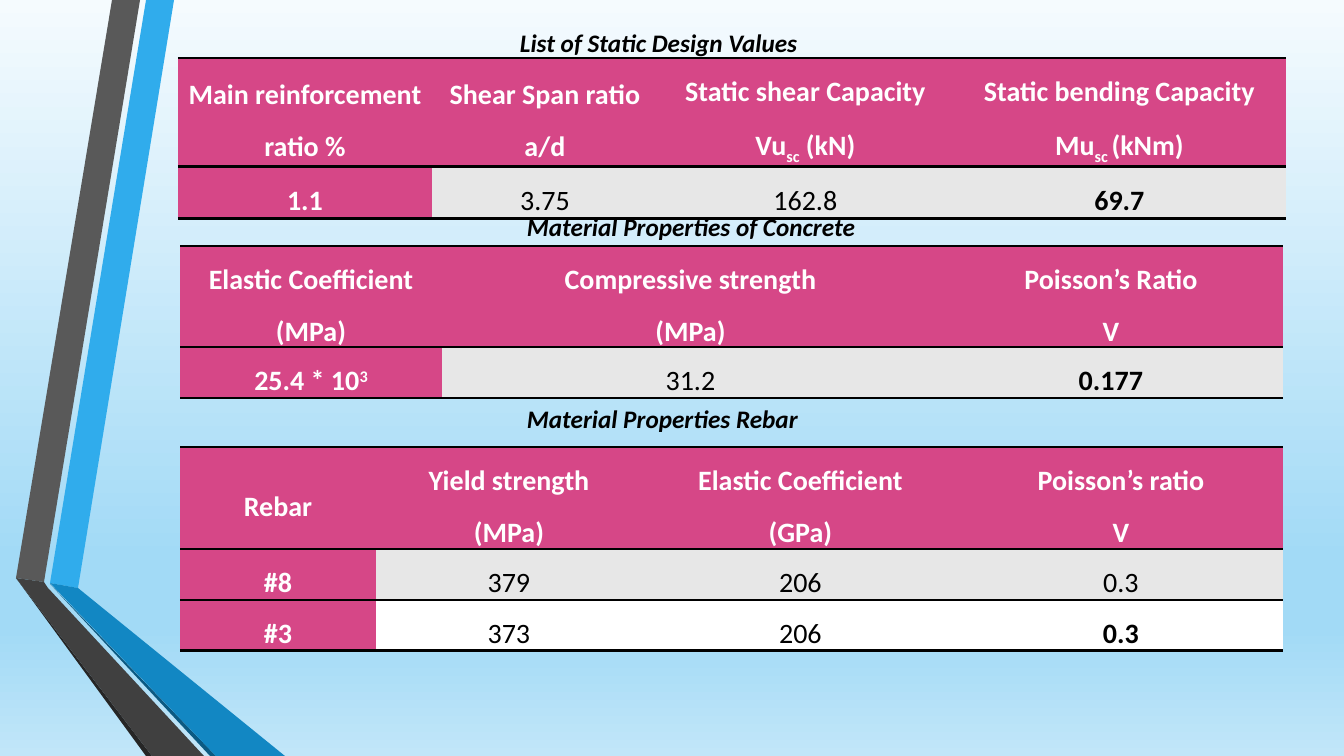
import pptx
import pptx.util
import pptx.dml.color
import pptx.enum.text
import pptx.oxml
import pptx.oxml.ns

PX = 914400 / 100.8
FONT = "Calibri"
COLORS = {
    "black": "000000", "white": "FFFFFF", "pink": "D64787", "band": "E7E7E7",
    "sky": "30ACEC", "blue": "1287C3", "navy": "0C5A82",
    "gray": "595959", "charcoal": "404040", "shade": "262626",
}
BACKGROUND_STOPS = [(0, "F5FBFE"), (74, "A2DAF6"), (83, "A2DAF6"), (100, "C1E6F9")]
NO_GRID_STYLE = "{2D5ABB26-0587-4C30-8999-92F81FD0307C}"
BASELINES = {"_": "-25000", "^": "30000"}

RIBBONS = [
    ("sky", [(50, 583), (78, 588), (174, 0), (146, 0)]),
    ("gray", [(140, 0), (112, 0), (16, 578), (44, 582)]),
    ("shade", [(16, 578), (146, 756), (152, 756)]),
    ("navy", [(50, 584), (210, 756), (216, 756)]),
    ("blue", [(50, 583), (216, 756), (285, 756), (78, 588)]),
    ("charcoal", [(204, 756), (48, 588), (44, 582), (16, 578), (152, 756)]),
]

# Each section: caption, caption box, table corner, column widths, row heights, rows.
SECTIONS = [
    ("List of Static Design Values", (510, 22, 301, 72), (178, 58),
     [254, 226, 295, 333], [108, 52],
     [["Main reinforcement ratio %", "Shear Span ratio a/d",
       "Static shear Capacity\nVu|_sc| (kN)", "Static bending Capacity\nMu|_sc |(kNm)"],
      ["1.1", "3.75", "162.8", "69.7"]]),
    ("Material Properties of Concrete", (517, 206, 353, 72), (180, 246),
     [262, 497, 344], [100, 51],
     [["Elastic Coefficient\n(MPa)", "Compressive strength\n(MPa)", "Poisson’s Ratio\nV"],
      ["25.4 * 10|^3", "31.2", "0.177"]]),
    ("Material Properties Rebar", (517, 398, 294, 72), (180, 447),
     [196, 266, 317, 324], [102, 51, 50],
     [["Rebar", "Yield strength\n(MPa)", "Elastic Coefficient\n(GPa)", "Poisson’s ratio\nV"],
      ["#8", "379", "206", "0.3"],
      ["#3", "373", "206", "0.3"]]),
]


def px(length):
    return pptx.util.Emu(round(length * PX))


def rgb(name):
    return pptx.dml.color.RGBColor.from_string(COLORS[name])


def set_background(slide):
    stops = "".join(f'<a:gs pos="{position * 1000}"><a:srgbClr val="{color}"/></a:gs>'
                    for position, color in BACKGROUND_STOPS)
    background = pptx.oxml.parse_xml(
        f'<p:bg {pptx.oxml.ns.nsdecls("p", "a")}><p:bgPr><a:gradFill rotWithShape="1">'
        f'<a:gsLst>{stops}</a:gsLst><a:lin ang="5400000" scaled="0"/></a:gradFill>'
        '<a:effectLst/></p:bgPr></p:bg>')
    slide.element.cSld.insert(0, background)


def add_ribbon(slide, color, points):
    builder = slide.shapes.build_freeform(*points[0], scale=PX)
    builder.add_line_segments(points[1:], close=True)
    shape = builder.convert_to_shape()
    shape.shadow.inherit = False
    shape.fill.solid()
    shape.fill.fore_color.rgb = rgb(color)
    shape.line.fill.background()


def style_font(font, size, color, bold):
    font.name = FONT
    font.size = pptx.util.Pt(size)
    font.color.rgb = rgb(color)
    font.bold = bold


def add_caption(slide, text, box):
    shape = slide.shapes.add_textbox(*map(px, box))
    shape.text_frame.word_wrap = False
    paragraph = shape.text_frame.paragraphs[0]
    paragraph.text = text
    style_font(paragraph.font, 18, "black", True)
    paragraph.font.italic = True


def write_cell(cell, text, color, bold):
    """Write lines of text; a part between bars led by _ or ^ is lowered or raised."""
    cell.vertical_anchor = pptx.enum.text.MSO_ANCHOR.MIDDLE
    cell.margin_left = cell.margin_right = px(7)
    cell.margin_top = cell.margin_bottom = 0
    for index, line in enumerate(text.split("\n")):
        frame = cell.text_frame
        paragraph = frame.add_paragraph() if index else frame.paragraphs[0]
        paragraph.alignment = pptx.enum.text.PP_ALIGN.CENTER
        paragraph.line_spacing = 1.5
        style_font(paragraph.font, 20, color, bold)
        for part in line.split("|"):
            run = paragraph.add_run()
            run.text = part.lstrip("_^")
            if part[0] in BASELINES:
                run.font._element.set("baseline", BASELINES[part[0]])


def add_border(cell, side):
    cell._tc.get_or_add_tcPr().append(pptx.oxml.parse_xml(
        f'<a:{side} {pptx.oxml.ns.nsdecls("a")} w="{pptx.util.Pt(2)}"><a:solidFill>'
        f'<a:srgbClr val="{COLORS["black"]}"/></a:solidFill></a:{side}>'))


def add_value_table(slide, corner, widths, heights, rows):
    """Header row and first column are pink; body rows alternate."""
    frame = slide.shapes.add_table(len(rows), len(widths), *map(
        px, (*corner, sum(widths), sum(heights))))
    table = frame.table
    table._tbl.tblPr.find(pptx.oxml.ns.qn("a:tableStyleId")).text = NO_GRID_STYLE
    for column, width in zip(table.columns, widths):
        column.width = px(width)
    last_row, last_column = len(rows) - 1, len(widths) - 1
    for r, texts in enumerate(rows):
        table.rows[r].height = px(heights[r])
        for c, text in enumerate(texts):
            cell = table.cell(r, c)
            heading = r == 0 or c == 0
            bold = heading or (r, c) == (last_row, last_column)
            write_cell(cell, text, "white" if heading else "black", bold)
            if r <= 1:
                add_border(cell, "lnT")
            if r in (0, last_row):
                add_border(cell, "lnB")
            cell.fill.solid()
            body = "band" if r % 2 else "white"
            cell.fill.fore_color.rgb = rgb("pink" if heading else body)


def main():
    presentation = pptx.Presentation()
    presentation.slide_width, presentation.slide_height = px(1344), px(756)
    slide = presentation.slides.add_slide(presentation.slide_layouts[6])
    set_background(slide)
    for color, points in RIBBONS:
        add_ribbon(slide, color, points)
    for caption, box, corner, widths, heights, rows in SECTIONS:
        add_value_table(slide, corner, widths, heights, rows)
        add_caption(slide, caption, box)
    presentation.save("out.pptx")


if __name__ == "__main__":
    main()
